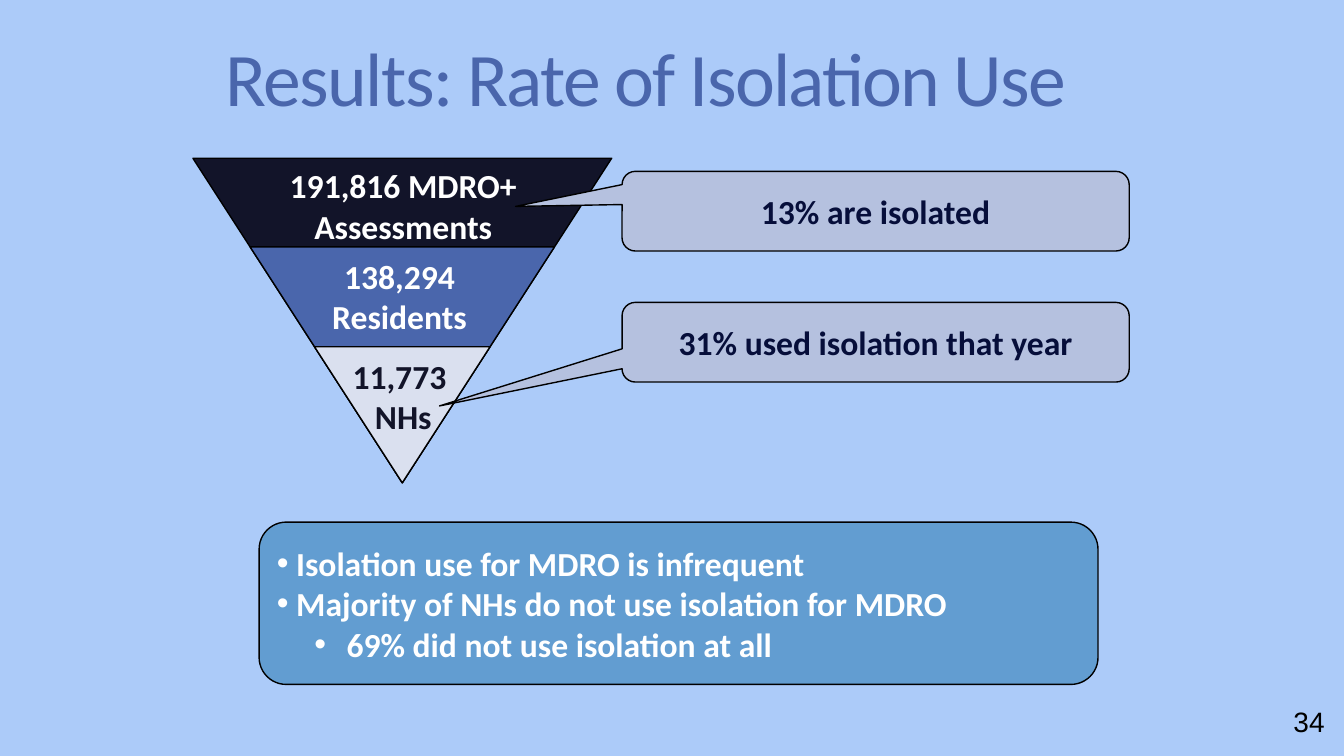
"""Build the slide on the rate of isolation use."""
from lxml import etree
from pptx import Presentation
from pptx import util as u
from pptx.dml.color import RGBColor
from pptx.enum import shapes, text
from pptx.oxml.ns import qn


def color(value):
    return RGBColor.from_string(value)


def write(paragraph, words, size=24, font="Calibri", fill="FFFFFF", bold=True,
          align=text.PP_ALIGN.CENTER, bullet_indent=None):
    run = paragraph.add_run()
    run.text = words
    run.font.size = u.Pt(size)
    run.font.name = font
    run.font.bold = bold
    run.font.color.rgb = color(fill)
    paragraph.alignment = align
    if bullet_indent:
        margin, hanging = bullet_indent
        properties = paragraph._p.get_or_add_pPr()
        properties.set("marL", str(u.Inches(margin)))
        properties.set("indent", str(-u.Inches(hanging)))
        etree.SubElement(properties, qn("a:buFont")).set("typeface", "Arial")
        etree.SubElement(properties, qn("a:buChar")).set("char", "•")
    return run


class SlideBuilder:
    outline = "000000"

    def __init__(self, presentation, background):
        self.slide = presentation.slides.add_slide(presentation.slide_layouts[5])
        self.slide.background.fill.solid()
        self.slide.background.fill.fore_color.rgb = color(background)

    def title(self, words, box, fill):
        shape = self.slide.shapes.title
        shape.left, shape.top, shape.width, shape.height = map(u.Inches, box)
        frame = shape.text_frame
        frame.vertical_anchor = text.MSO_ANCHOR.MIDDLE
        frame.auto_size = text.MSO_AUTO_SIZE.NONE
        paragraph = frame.paragraphs[0]
        paragraph.line_spacing = 0.85
        run = write(paragraph, words, size=54, fill=fill, bold=False,
                    align=text.PP_ALIGN.LEFT)
        run._r.get_or_add_rPr().set("spc", "-120")

    def shape(self, kind, box, fill):
        shape = self.slide.shapes.add_shape(kind, *map(u.Inches, box))
        shape.shadow.inherit = False
        shape.fill.solid()
        shape.fill.fore_color.rgb = color(fill)
        shape.line.color.rgb = color(self.outline)
        shape.line.width = u.Pt(1)
        shape.text_frame.vertical_anchor = text.MSO_ANCHOR.MIDDLE
        return shape

    def funnel_level(self, center, top, apex, fill):
        height = apex - top
        width = height * 1.29
        box = (center - width / 2, top, width, height)
        triangle = self.shape(shapes.MSO_SHAPE.ISOSCELES_TRIANGLE, box, fill)
        triangle._element.spPr.xfrm.set("flipV", "1")

    def label(self, lines, box, wrap=True, **style):
        frame = self.slide.shapes.add_textbox(*map(u.Inches, box)).text_frame
        frame.word_wrap = wrap
        frame.auto_size = text.MSO_AUTO_SIZE.SHAPE_TO_FIT_TEXT
        for index, words in enumerate(lines):
            paragraph = frame.add_paragraph() if index else frame.paragraphs[0]
            write(paragraph, words, **style)

    def callout(self, words, top, pointer):
        kind = shapes.MSO_SHAPE.ROUNDED_RECTANGULAR_CALLOUT
        shape = self.shape(kind, (6.17, top, 5.03, 0.79), "B5C1DF")
        shape.adjustments[0], shape.adjustments[1] = pointer
        write(shape.text_frame.paragraphs[0], words, fill="060E3A")

    def bullet_panel(self, items, box, fill):
        shape = self.shape(shapes.MSO_SHAPE.ROUNDED_RECTANGLE, box, fill)
        frame = shape.text_frame
        indents = [(0.19, 0.19), (0.69, 0.32)]
        for index, (level, words) in enumerate(items):
            paragraph = frame.add_paragraph() if index else frame.paragraphs[0]
            paragraph.level = level
            write(paragraph, words, align=text.PP_ALIGN.LEFT,
                  bullet_indent=indents[level])


def main():
    presentation = Presentation()
    presentation.slide_width = u.Inches(13.33)
    presentation.slide_height = u.Inches(7.5)
    builder = SlideBuilder(presentation, "ACCBF9")
    builder.title("Results: Rate of Isolation Use", (2.14, 0.28, 9.5, 1.1), "4A66AC")

    for top, fill in [(1.57, "121429"), (2.45, "4A66AC"), (3.44, "DAE0EF")]:
        builder.funnel_level(3.99, top, 4.79, fill)

    labels = [
        (["191,816 MDRO+ Assessments"], 1.59, 3.46, "FFFFFF"),
        (["138,294 ", "Residents "], 2.49, 1.95, "FFFFFF"),
        (["11,773 ", "NHs"], 3.48, 1.33, "121429"),
    ]
    for lines, top, width, fill in labels:
        builder.label(lines, (4 - width / 2, top, width, 0.91), fill=fill)

    builder.callout("13% are isolated", 1.7, (-0.71, -0.06))
    builder.callout("31% used isolation that year", 3, (-0.86, 0.8))

    builder.bullet_panel([
        (0, "Isolation use for MDRO is infrequent"),
        (0, "Majority of NHs do not use isolation for MDRO"),
        (1, "69% did not use isolation at all"),
    ], (2.57, 5.18, 8.32, 1.61), "629DD1")
    builder.label(["34"], (12.73, 6.94, 0.51, 0.44), wrap=False, size=20,
                  font="Arial", fill="000000", bold=False, align=text.PP_ALIGN.LEFT)
    presentation.save("out.pptx")


if __name__ == "__main__":
    main()
